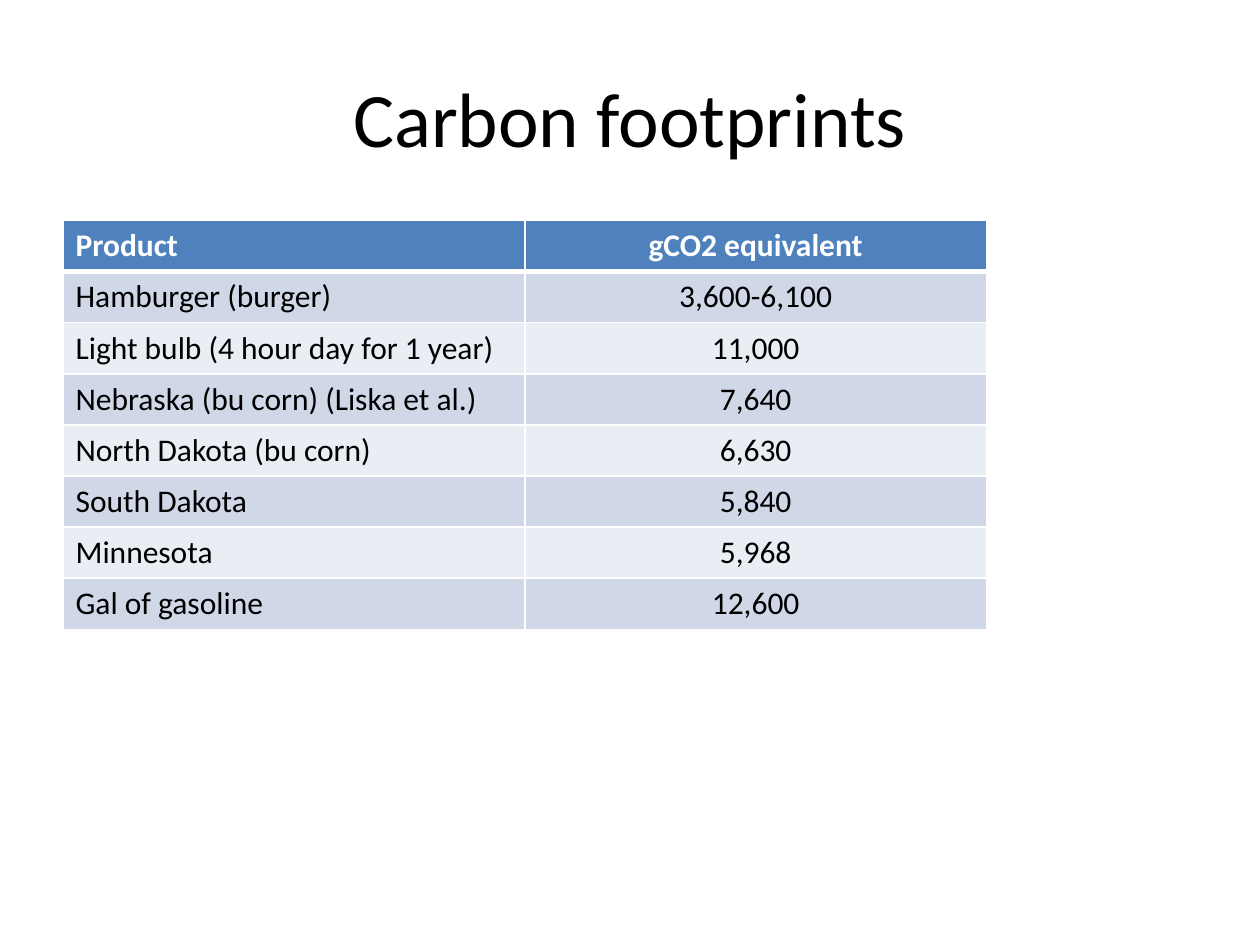
from dataclasses import dataclass

from lxml.etree import SubElement
from pptx import Presentation
from pptx.dml.color import RGBColor
from pptx.enum.text import MSO_ANCHOR, PP_ALIGN
from pptx.oxml.ns import qn
from pptx.util import Inches, Pt


@dataclass(frozen=True)
class Theme:
    font: str = "Calibri"
    title_size: int = 44
    body_size: int = 18
    text: str = "000000"
    header_text: str = "FFFFFF"
    header_fill: str = "4F81BD"
    bands: tuple = ("D0D8E8", "E9EDF4")
    border: str = "FFFFFF"
    border_width: int = 1
    header_rule: int = 3


THEME = Theme()

ROWS = [
    ("Product", "gCO2 equivalent"),
    ("Hamburger (burger)", "3,600-6,100"),
    ("Light bulb (4 hour day for 1 year)", "11,000"),
    ("Nebraska (bu corn) (Liska et al.)", "7,640"),
    ("North Dakota (bu corn)", "6,630"),
    ("South Dakota", "5,840"),
    ("Minnesota", "5,968"),
    ("Gal of gasoline", "12,600"),
]


def write_text(tf, text, size, color, align, bold=False):
    tf.text = text
    p = tf.paragraphs[0]
    p.alignment = align
    font = p.runs[0].font
    font.name = THEME.font
    font.size = Pt(size)
    font.bold = bold
    font.color.rgb = RGBColor.from_string(color)


def set_borders(cell, top, bottom):
    tc_pr = cell._tc.get_or_add_tcPr()
    sides = {"L": THEME.border_width, "R": THEME.border_width, "T": top, "B": bottom}
    for side, width in sides.items():
        ln = SubElement(tc_pr, qn(f"a:ln{side}"), w=str(Pt(width)))
        fill = SubElement(ln, qn("a:solidFill"))
        SubElement(fill, qn("a:srgbClr"), val=THEME.border)


def add_title(s, text, left, top, width, height):
    title = s.shapes.title
    title.left, title.top, title.width, title.height = left, top, width, height
    tf = title.text_frame
    tf.vertical_anchor = MSO_ANCHOR.MIDDLE
    write_text(tf, text, THEME.title_size, THEME.text, PP_ALIGN.CENTER)


def add_footprint_table(s, rows, left, top, width, height):
    table = s.shapes.add_table(len(rows), len(rows[0]), left, top, width, height).table
    for i, values in enumerate(rows):
        header = i == 0
        fill = THEME.header_fill if header else THEME.bands[(i - 1) % 2]
        color = THEME.header_text if header else THEME.text
        rule_above = THEME.header_rule if i == 1 else THEME.border_width
        rule_below = THEME.header_rule if header else THEME.border_width
        for j, value in enumerate(values):
            cell = table.cell(i, j)
            align = PP_ALIGN.CENTER if j else PP_ALIGN.LEFT
            write_text(cell.text_frame, value, THEME.body_size, color, align, header)
            set_borders(cell, rule_above, rule_below)
            cell.fill.solid()
            cell.fill.fore_color.rgb = RGBColor.from_string(fill)


def main():
    prs = Presentation()
    prs.slide_width, prs.slide_height = Inches(10), Inches(7.5)
    s = prs.slides.add_slide(prs.slide_layouts.get_by_name("Title Only"))
    add_title(s, "Carbon footprints", Inches(0.5), Inches(0.3), Inches(9), Inches(1.25))
    add_footprint_table(s, ROWS, Inches(0.5), Inches(1.75), Inches(7.33), Inches(3.24))
    prs.save("out.pptx")


if __name__ == "__main__":
    main()
